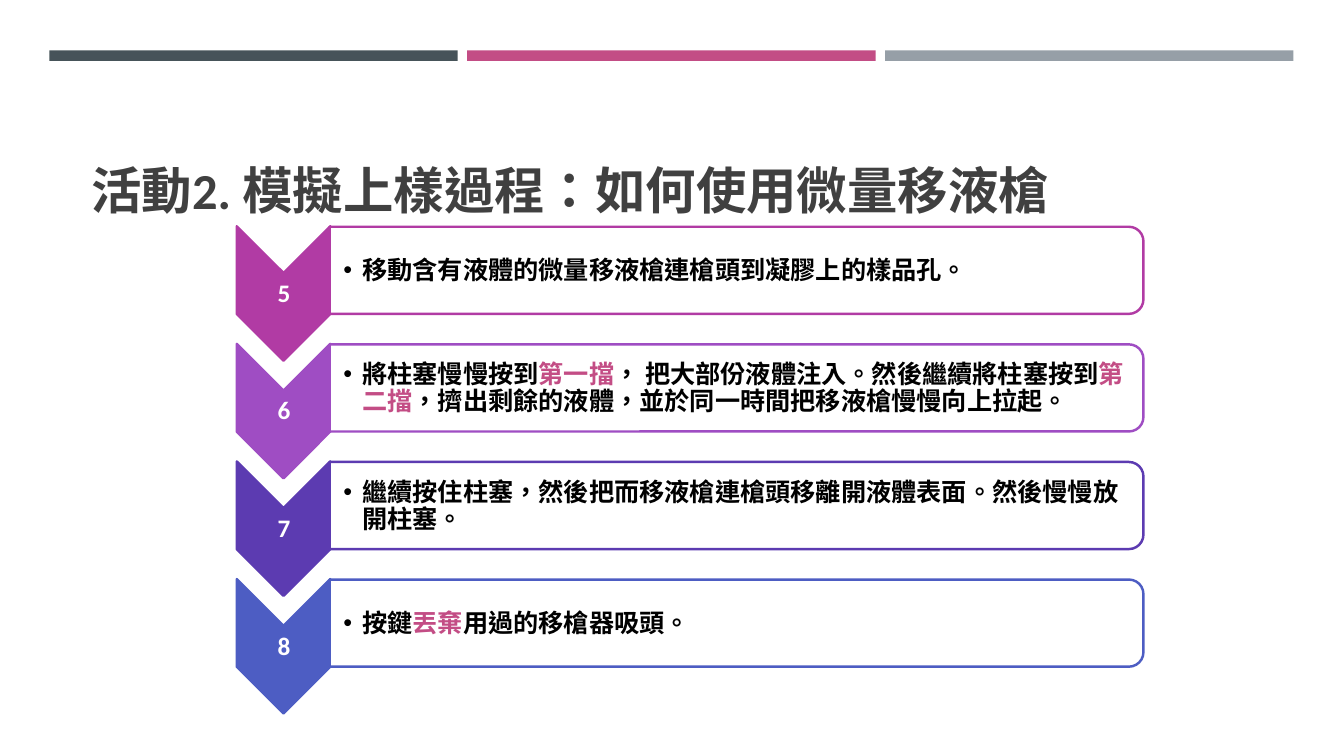
from dataclasses import dataclass

from lxml import etree
from pptx import Presentation
from pptx import util as u
from pptx.dml.color import RGBColor
from pptx.enum import lang, shapes, text
from pptx.oxml.ns import qn


@dataclass(frozen=True)
class Theme:
    slate: str = "465359"
    pink: str = "C34D85"
    grey: str = "969FA7"
    title: str = "404040"
    black: str = "000000"
    white: str = "FFFFFF"
    latin: str = "Calibri"
    alternate: str = "Arial"
    title_size: int = 36
    body_size: int = 18
    outline: float = 1.75


THEME = Theme()
PLAIN = {}
ACCENT = {"color": THEME.pink}
ALTERNATE = {"font": THEME.alternate}

STEPS = [
    ("5", "B13BA4", [
        ("移動含有液體的", PLAIN),
        ("微量移液槍連槍頭到凝膠上的樣品孔。", ALTERNATE),
    ]),
    ("6", "9F4DC3", [
        ("將柱塞慢慢按到", PLAIN),
        ("第一擋", ACCENT),
        ("， 把大部份液體注入。然後繼續將柱塞按到", PLAIN),
        ("第二擋", ACCENT),
        ("，擠出剩餘的液體，並於同一時間把", PLAIN),
        ("移液槍", ALTERNATE),
        ("慢慢向上拉起。", PLAIN),
    ]),
    ("7", "5C3BB1", [
        ("繼續按住柱塞，然後把而", PLAIN),
        ("移液槍連槍頭", ALTERNATE),
        ("移離開液體表面。然後慢慢放開柱塞。", PLAIN),
    ]),
    ("8", "4D5DC3", [
        ("按鍵", PLAIN),
        ("丟棄", ACCENT),
        ("用過的移", PLAIN),
        ("槍", ALTERNATE),
        ("器吸頭。", PLAIN),
    ]),
]


def px(value):
    return u.Emu(value * 9525)


def add_block(slide, kind, box, fill, line=None, rotation=0):
    shape = slide.shapes.add_shape(kind, *map(px, box))
    shape.shadow.inherit = False
    shape.rotation = rotation
    shape.fill.solid()
    shape.fill.fore_color.rgb = RGBColor.from_string(fill)
    if line:
        shape.line.color.rgb = RGBColor.from_string(line)
        shape.line.width = u.Pt(THEME.outline)
    else:
        shape.line.fill.background()
    return shape


def add_bullet(paragraph, indent):
    properties = paragraph._p.get_or_add_pPr()
    properties.set("marL", str(px(indent)))
    properties.set("indent", str(px(-indent)))
    etree.SubElement(properties, qn("a:buFont")).set("typeface", THEME.alternate)
    etree.SubElement(properties, qn("a:buChar")).set("char", "•")


def add_run(paragraph, words, size, color, font=THEME.latin):
    run = paragraph.add_run()
    run.text = words
    run.font.name = font
    run.font.size = u.Pt(size)
    run.font.bold = True
    run.font.color.rgb = RGBColor.from_string(color)
    run.font.language_id = lang.MSO_LANGUAGE_ID.TRADITIONAL_CHINESE


def add_text(slide, box, runs, size=THEME.body_size, color=THEME.black,
             align=text.PP_ALIGN.LEFT, anchor=text.MSO_ANCHOR.MIDDLE,
             insets=(1, 1, 1, 1), spacing=0.9, bullet_indent=None):
    frame = slide.shapes.add_textbox(*map(px, box)).text_frame
    frame.word_wrap = True
    frame.vertical_anchor = anchor
    (frame.margin_left, frame.margin_top,
     frame.margin_right, frame.margin_bottom) = map(px, insets)
    paragraph = frame.paragraphs[0]
    if bullet_indent:
        add_bullet(paragraph, bullet_indent)
    paragraph.alignment = align
    paragraph.line_spacing = spacing
    for words, style in runs:
        add_run(paragraph, words, **{"size": size, "color": color, **style})


def add_step(slide, offset, number, color, runs):
    add_block(slide, shapes.MSO_SHAPE.CHEVRON, (206, 235 + offset, 128, 89),
              color, line=color, rotation=90)
    add_text(slide, (226, 261 + offset, 89, 38), [(number, PLAIN)],
             color=THEME.white, align=text.PP_ALIGN.CENTER)
    add_block(slide, shapes.MSO_SHAPE.ROUND_2_SAME_RECTANGLE,
              (660, offset - 130, 83, 775), THEME.white, line=color, rotation=90)
    add_text(slide, (314, 221 + offset, 771, 75), runs,
             insets=(13, 1, 1, 1), bullet_indent=18)


def main():
    presentation = Presentation()
    presentation.slide_width = px(1280)
    presentation.slide_height = px(720)
    slide = presentation.slides.add_slide(presentation.slide_layouts[6])

    for index, color in enumerate((THEME.slate, THEME.pink, THEME.grey)):
        add_block(slide, shapes.MSO_SHAPE.RECTANGLE,
                  (47 + 398 * index, 48, 389, 10), color)
    for index, step in enumerate(STEPS):
        add_step(slide, 112 * index, *step)
    add_text(slide, (77, 89, 1158, 125),
             [("活動2. 模擬上樣過程：如何使用微量移液槍", PLAIN)],
             size=THEME.title_size, color=THEME.title,
             anchor=text.MSO_ANCHOR.BOTTOM, insets=(10, 5, 10, 5), spacing=1.0)

    presentation.save("out.pptx")


if __name__ == "__main__":
    main()
